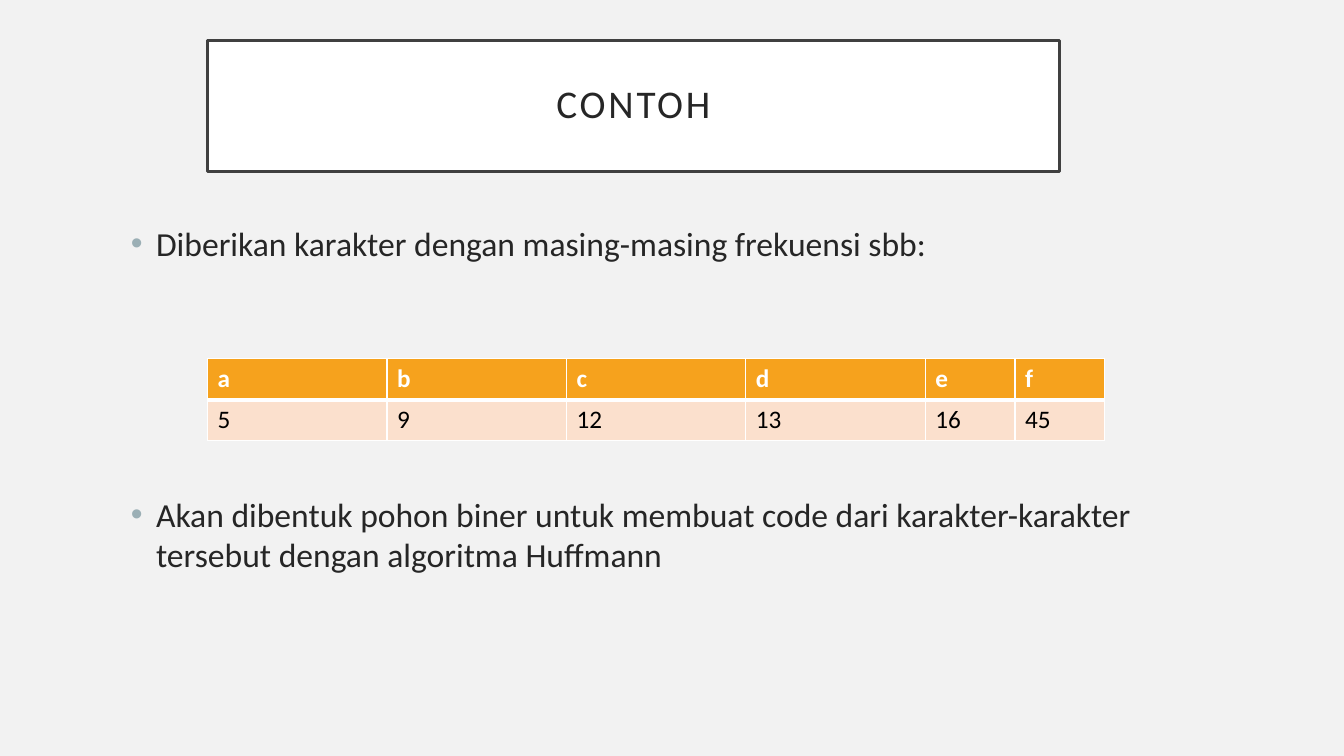
from lxml.etree import SubElement
from pptx import Presentation
from pptx.dml.color import RGBColor
from pptx.enum.text import MSO_ANCHOR, MSO_AUTO_SIZE, PP_ALIGN
from pptx.oxml.ns import qn
from pptx.util import Pt

FREQUENCIES = {"a": 5, "b": 9, "c": 12, "d": 13, "e": 16, "f": 45}
COLUMN_WIDTHS = [128.16] * 4 + [64.08] * 2
ROW_HEIGHT = 29.2


def color(value):
    return RGBColor.from_string(value)


def write(paragraph, text, size=24, ink="262626", bold=False, spacing=0):
    run = paragraph.add_run()
    run.text = text
    run.font.name = "Calibri"
    run.font.size = Pt(size)
    run.font.bold = bold
    run.font.color.rgb = color(ink)
    if spacing:
        run.font._element.set("spc", str(spacing * 100))


def add_bullet(paragraph, ink="9BAFB5", indent=18):
    properties = paragraph._p.get_or_add_pPr()
    properties.set("marL", str(Pt(indent)))
    properties.set("indent", str(-Pt(indent)))
    bullet_color = SubElement(properties, qn("a:buClr"))
    SubElement(bullet_color, qn("a:srgbClr"), val=ink)
    SubElement(properties, qn("a:buFont"), typeface="Arial")
    SubElement(properties, qn("a:buChar"), char="•")


def add_borders(cell, **widths):
    properties = cell._tc.get_or_add_tcPr()
    for position, side in enumerate(("lnL", "lnR", "lnT", "lnB")):
        line = SubElement(properties, qn(f"a:{side}"), w=str(Pt(widths.get(side, 1))))
        fill = SubElement(line, qn("a:solidFill"))
        SubElement(fill, qn("a:srgbClr"), val="FFFFFF")
        properties.insert(position, line)


class SlideBuilder:
    def __init__(self, presentation, background="F2F2F2"):
        self.slide = presentation.slides.add_slide(presentation.slide_layouts[5])
        self.slide.background.fill.solid()
        self.slide.background.fill.fore_color.rgb = color(background)

    def title(self, text, left, top, width, height):
        shape = self.slide.shapes.title
        shape.left, shape.top = Pt(left), Pt(top)
        shape.width, shape.height = Pt(width), Pt(height)
        shape.fill.solid()
        shape.fill.fore_color.rgb = color("FFFFFF")
        shape.line.color.rgb = color("404040")
        shape.line.width = Pt(2.5)
        frame = shape.text_frame
        frame.auto_size = MSO_AUTO_SIZE.NONE
        frame.vertical_anchor = MSO_ANCHOR.MIDDLE
        frame.margin_left = frame.margin_right = Pt(14.4)
        frame.margin_top = frame.margin_bottom = Pt(14.4)
        paragraph = frame.paragraphs[0]
        paragraph.alignment = PP_ALIGN.CENTER
        paragraph.line_spacing = 0.9
        write(paragraph, text, size=28, spacing=2)

    def bullets(self, texts, left, top, width, height, gap):
        shape = self.slide.shapes.add_textbox(Pt(left), Pt(top), Pt(width), Pt(height))
        frame = shape.text_frame
        frame.word_wrap = True
        for index, text in enumerate(texts):
            paragraph = frame.add_paragraph() if index else frame.paragraphs[0]
            paragraph.space_before = Pt(gap if index else 0)
            add_bullet(paragraph)
            write(paragraph, text)

    def table(self, rows, left, top, widths, row_height):
        shape = self.slide.shapes.add_table(
            len(rows), len(widths), Pt(left), Pt(top),
            Pt(sum(widths)), Pt(row_height * len(rows)))
        table = shape.table
        for column, width in zip(table.columns, widths):
            column.width = Pt(width)
        for row_index, values in enumerate(rows):
            header = row_index == 0
            table.rows[row_index].height = Pt(row_height)
            for column_index, value in enumerate(values):
                cell = table.cell(row_index, column_index)
                cell.fill.solid()
                cell.fill.fore_color.rgb = color("F6A21D" if header else "FBE0CD")
                add_borders(cell, **({"lnB": 3} if header else {"lnT": 3}))
                write(cell.text_frame.paragraphs[0], str(value), size=18,
                      ink="FFFFFF" if header else "000000", bold=header)


def main():
    presentation = Presentation()
    presentation.slide_width, presentation.slide_height = Pt(960), Pt(540)
    builder = SlideBuilder(presentation)

    # Title
    builder.title("CONTOH", 148.3, 28.8, 608.4, 93.6)

    # Bullets, with room for the table between them
    builder.bullets([
        "Diberikan karakter dengan masing-masing frekuensi sbb:",
        "Akan dibentuk pohon biner untuk membuat code dari karakter-karakter "
        "tersebut dengan algoritma Huffmann",
    ], 86.4, 155.5, 791.3, 248.4, gap=165)

    # Character frequencies
    builder.table([list(FREQUENCIES), list(FREQUENCIES.values())],
                  148.3, 256.3, COLUMN_WIDTHS, ROW_HEIGHT)

    presentation.save("out.pptx")


if __name__ == "__main__":
    main()
